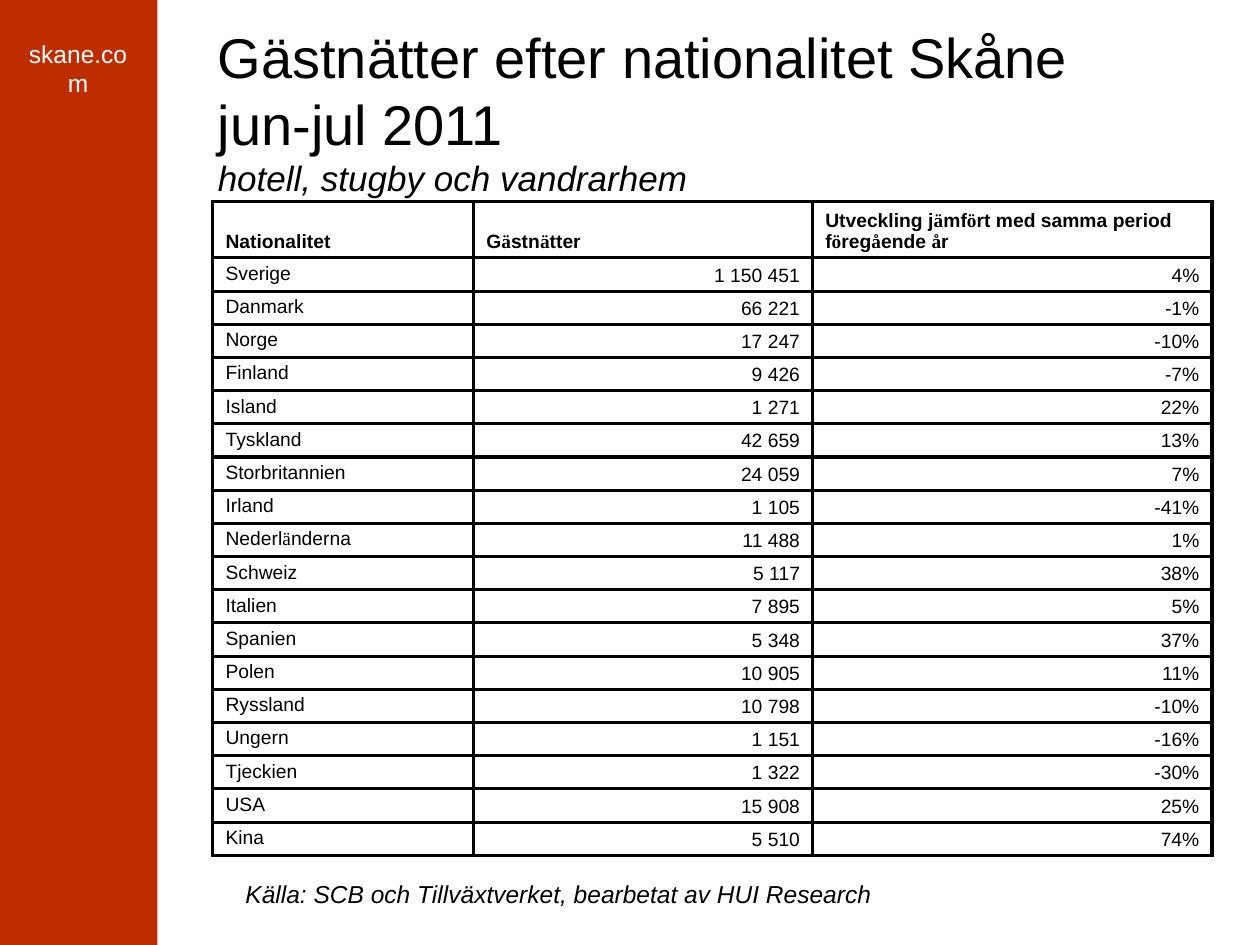
from itertools import groupby

from lxml import etree
from pptx import Presentation
from pptx import util as u
from pptx.dml.color import RGBColor
from pptx.enum import shapes, text
from pptx.oxml.ns import qn

COLORS = {"red": "BE2D00", "white": "FFFFFF", "black": "000000"}
SANS, SERIF = "Arial", "Times New Roman"
HEADS = ["Nationalitet", "Gästnätter",
         "Utveckling jämfört med samma period föregående år"]
ROWS = [
    ("Sverige", "1 150 451", "4%"),
    ("Danmark", "66 221", "-1%"),
    ("Norge", "17 247", "-10%"),
    ("Finland", "9 426", "-7%"),
    ("Island", "1 271", "22%"),
    ("Tyskland", "42 659", "13%"),
    ("Storbritannien", "24 059", "7%"),
    ("Irland", "1 105", "-41%"),
    ("Nederländerna", "11 488", "1%"),
    ("Schweiz", "5 117", "38%"),
    ("Italien", "7 895", "5%"),
    ("Spanien", "5 348", "37%"),
    ("Polen", "10 905", "11%"),
    ("Ryssland", "10 798", "-10%"),
    ("Ungern", "1 151", "-16%"),
    ("Tjeckien", "1 322", "-30%"),
    ("USA", "15 908", "25%"),
    ("Kina", "5 510", "74%"),
]
WIDTHS = [2.07, 2.69, 3.17]
HIGH, HEAD = 5.16, 0.44


def style(run, size, color="black", bold=False, slant=False, face=SANS):
    font = run.font
    font.name, font.size = face, u.Pt(size)
    font.bold, font.italic = bold, slant
    font.color.rgb = RGBColor.from_string(COLORS[color])


def add_bar(slide, height):
    bar = slide.shapes.add_shape(shapes.MSO_SHAPE.RECTANGLE, 0, 0,
                                 u.Inches(1.25), height)
    bar.shadow.inherit = False
    bar.fill.solid()
    bar.fill.fore_color.rgb = RGBColor.from_string(COLORS["red"])
    bar.line.fill.background()


def add_label(slide, words, place, size, color="black", slant=False):
    box = slide.shapes.add_textbox(*map(u.Inches, place))
    frame = box.text_frame
    frame.word_wrap = True
    para = frame.paragraphs[0]
    para.text = words
    for run in para.runs:
        style(run, size, color, slant=slant)
    return frame


def add_edges(cell):
    props = cell._tc.get_or_add_tcPr()
    for spot, side in enumerate(("lnL", "lnR", "lnT", "lnB")):
        line = etree.Element(qn(f"a:{side}"), w=str(u.Pt(2)))
        fill = etree.SubElement(line, qn("a:solidFill"))
        etree.SubElement(fill, qn("a:srgbClr"), val=COLORS["black"])
        props.insert(spot, line)


def fill_cell(cell, words, head, first):
    cell.fill.background()
    cell.margin_left = cell.margin_right = u.Inches(0.1)
    cell.margin_top = cell.margin_bottom = u.Inches(0.04)
    low = head or not first
    cell.vertical_anchor = text.MSO_ANCHOR.BOTTOM if low else text.MSO_ANCHOR.TOP
    para = cell.text_frame.paragraphs[0]
    if not head and not first:
        para.alignment = text.PP_ALIGN.RIGHT
    for accent, chars in groupby(words, lambda char: char in "åäö"):
        run = para.add_run()
        run.text = "".join(chars)
        style(run, 11, bold=head, face=SERIF if accent else SANS)
    add_edges(cell)


def add_grid(slide):
    data = [HEADS, *ROWS]
    place = map(u.Inches, (1.69, 1.6, sum(WIDTHS), HIGH))
    table = slide.shapes.add_table(len(data), len(HEADS), *place).table
    table.first_row = table.horz_banding = False
    for col, width in zip(table.columns, WIDTHS):
        col.width = u.Inches(width)
    for num, (row, words) in enumerate(zip(table.rows, data)):
        row.height = u.Inches((HIGH - HEAD) / len(ROWS) if num else HEAD)
        for col, cell in enumerate(row.cells):
            fill_cell(cell, words[col], num == 0, col == 0)


def main():
    """Build the slide on guest nights by nationality."""
    deck = Presentation()
    deck.slide_width, deck.slide_height = u.Inches(10), u.Inches(7.5)
    slide = deck.slides.add_slide(deck.slide_layouts[6])
    add_bar(slide, deck.slide_height)
    site = add_label(slide, "skane.com", (0.06, 0.26, 1.12, 0.33), 14, "white")
    site.paragraphs[0].alignment = text.PP_ALIGN.CENTER
    title = add_label(
        slide, "Gästnätter efter nationalitet Skåne\vjun-jul 2011\v"
        "hotell, stugby och vandrarhem", (1.63, 0.25, 7.99, 1.25), 32)
    title.vertical_anchor = text.MSO_ANCHOR.MIDDLE
    style(title.paragraphs[0].runs[-1], 20, slant=True)
    add_label(slide, "Källa: SCB och Tillväxtverket, bearbetat av HUI Research",
              (1.85, 6.93, 6.83, 0.33), 14, slant=True)
    add_grid(slide)
    deck.save("out.pptx")


if __name__ == "__main__":
    main()
